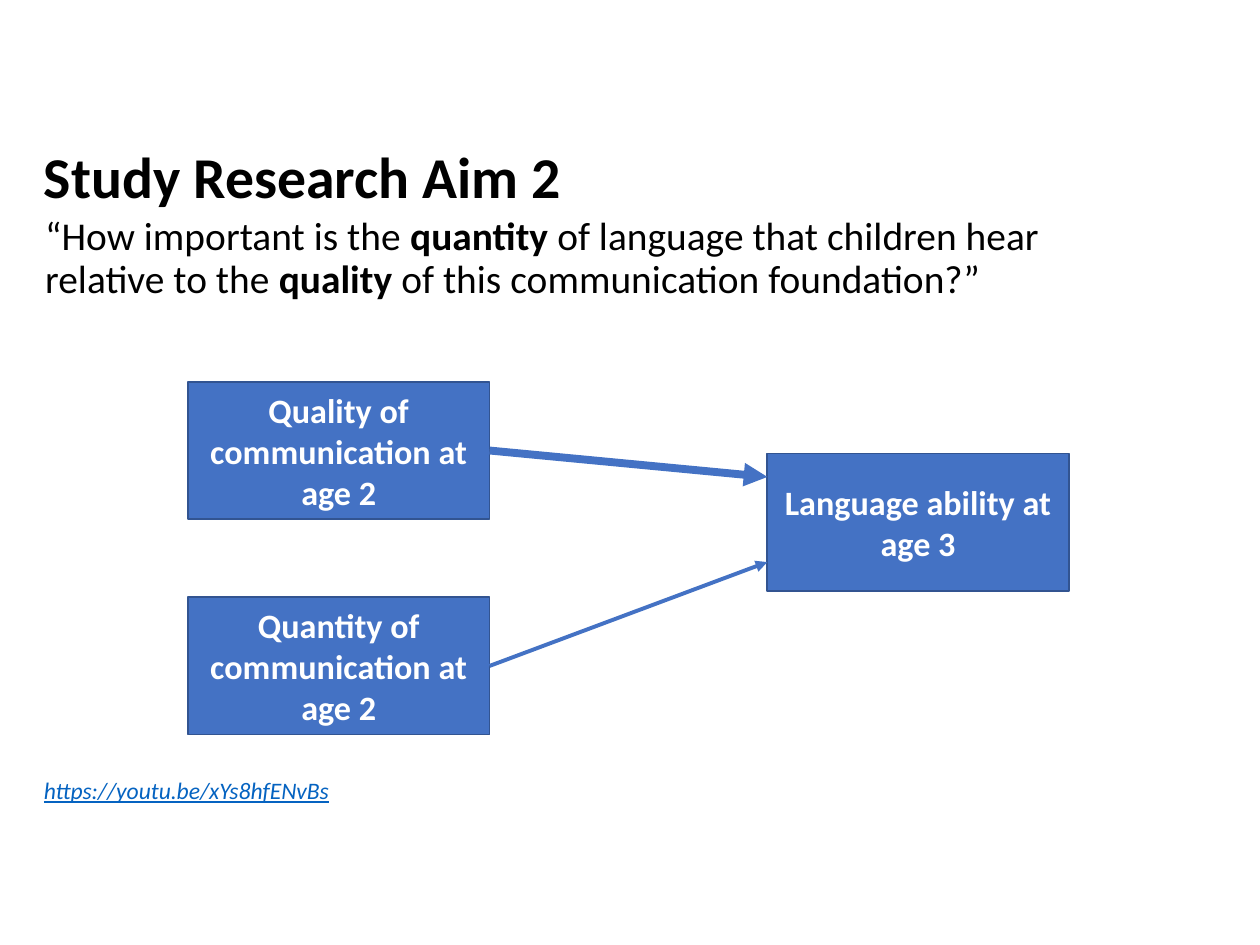
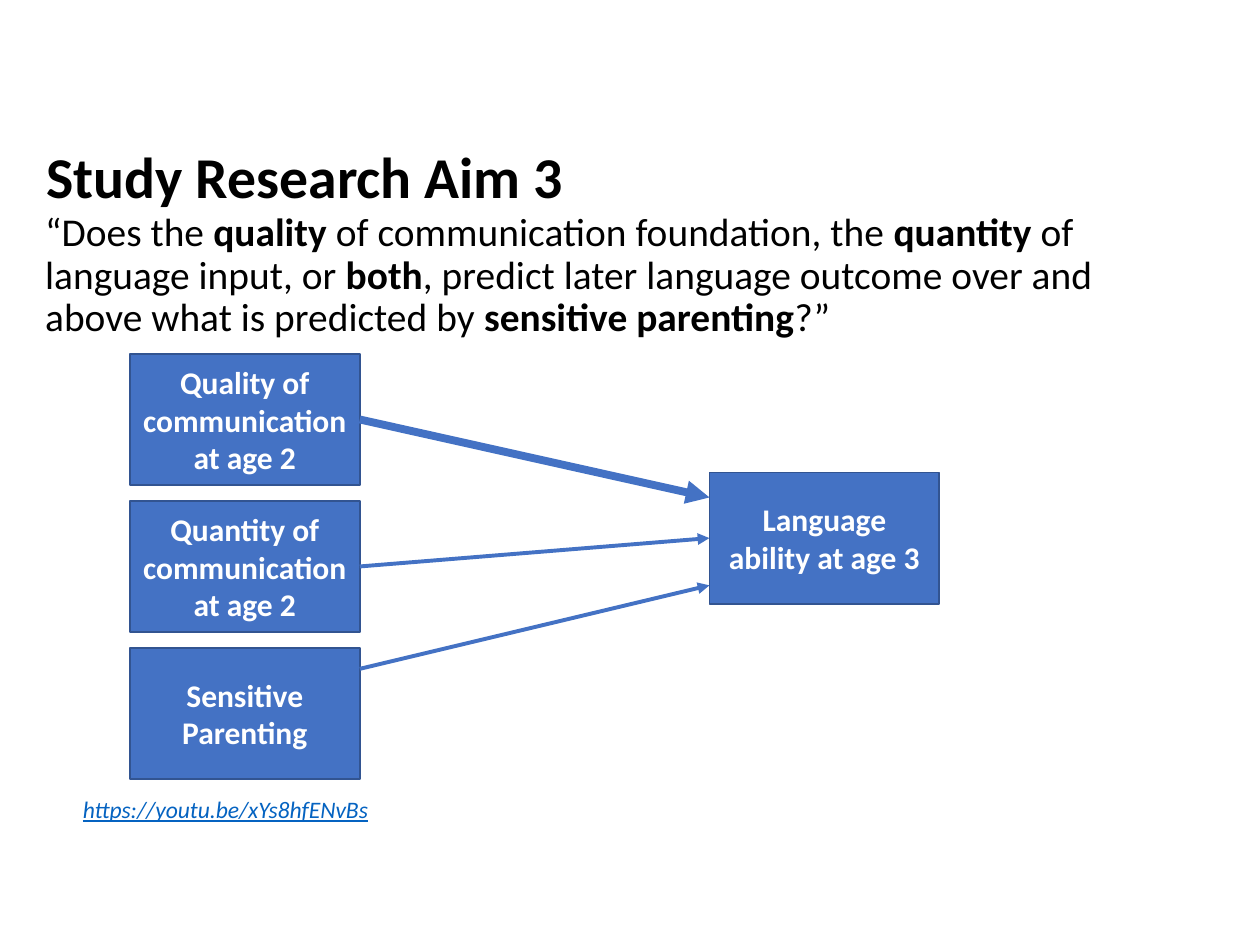
from lxml import etree
from pptx import Presentation
from pptx.dml.color import RGBColor
from pptx.enum.shapes import MSO_CONNECTOR, MSO_SHAPE
from pptx.enum.text import MSO_ANCHOR, PP_ALIGN
from pptx.oxml.ns import qn
from pptx.util import Pt

STRAIGHT = MSO_CONNECTOR.STRAIGHT
RECTANGLE = MSO_SHAPE.RECTANGLE
TOP, MIDDLE = MSO_ANCHOR.TOP, MSO_ANCHOR.MIDDLE
LEFT, CENTER = PP_ALIGN.LEFT, PP_ALIGN.CENTER

BLACK = RGBColor(0x00, 0x00, 0x00)
WHITE = RGBColor(0xFF, 0xFF, 0xFF)
BLUE = RGBColor(0x44, 0x72, 0xC4)
BLUE_EDGE = RGBColor(0x32, 0x54, 0x91)
LINK_BLUE = RGBColor(0x05, 0x63, 0xC1)

TITLE = {"size": Pt(33), "bold": True}
QUESTION = {"size": Pt(22.5)}
LINK = {"size": Pt(13.5), "italic": True, "underline": True}
LINK_TEXT = "https://youtu.be/xYs8hfENvBs"
STRONG, NORMAL = 4.5, 2.25
LEFT_SIDE, RIGHT_SIDE = 1, 3

# Text between ** marks is bold. A predictor is (label, arrow weight,
# arrow start and arrow end as fractions of the box heights).
SLIDES = [
    {
        "title": "Study Research Aim 2",
        "title_left": 18,
        "question": "“How important is the **quantity** of language that children hear "
                    "relative to the **quality** of this communication foundation?”",
        "question_top": 120.2,
        "link_at": (18, 440),
        "box_size": (172.4, 78.5),
        "label_size": 19.5,
        "predictors_at": (107.4, 218.2),
        "pitch": 123.1,
        "predictors": [
            ("Quality of communication at age 2", STRONG, 0.5, 0.17),
            ("Quantity of communication at age 2", NORMAL, 0.5, 0.79),
        ],
        "outcome_at": (438.5, 259.2),
    },
    {
        "title": "Study Research Aim 3",
        "title_left": 19.4,
        "question": "“Does the **quality** of communication foundation, the **quantity** of "
                    "language input, or **both**, predict later language outcome over and "
                    "above what is predicted by **sensitive parenting**?”",
        "question_top": 118,
        "link_at": (40.3, 450.7),
        "box_size": (131.4, 75),
        "label_size": 18,
        "predictors_at": (74.2, 202.2),
        "pitch": 84,
        "predictors": [
            ("Quality of communication at age 2", STRONG, 0.5, 0.19),
            ("Quantity of communication at age 2", NORMAL, 0.5, 0.5),
            ("Sensitive Parenting", NORMAL, 0.16, 0.86),
        ],
        "outcome_at": (405.4, 270),
    },
]
OUTCOME = "Language ability at age 3"


def write(shape, text, color, fmt, align=LEFT, anchor=TOP, spacing=1.0):
    """Fill a shape with one paragraph, bold between ** marks."""
    tf = shape.text_frame
    tf.word_wrap = True
    tf.vertical_anchor = anchor
    p = tf.paragraphs[0]
    p.alignment = align
    p.line_spacing = spacing
    for i, part in enumerate(text.split("**")):
        r = p.add_run()
        r.text = part
        r.font.name = "Calibri"
        r.font.color.rgb = color
        for name, value in ({"bold": i % 2 == 1} | fmt).items():
            setattr(r.font, name, value)


def add_text(slide, left, top, width, height, text, fmt, color=BLACK, **layout):
    box = slide.shapes.add_textbox(Pt(left), Pt(top), Pt(width), Pt(height))
    write(box, text, color, fmt, **layout)


def add_box(slide, left, top, size, label, label_size):
    sp = slide.shapes.add_shape(RECTANGLE, Pt(left), Pt(top), *map(Pt, size))
    sp.shadow.inherit = False
    sp.fill.solid()
    sp.fill.fore_color.rgb = BLUE
    sp.line.color.rgb = BLUE_EDGE
    sp.line.width = Pt(1)
    write(sp, label, WHITE, {"size": Pt(label_size), "bold": True}, CENTER, MIDDLE)
    return sp


def add_arrow(slide, source, target, weight, start, end):
    """Run from the right side of source to the left side of target."""
    line = slide.shapes.add_connector(
        STRAIGHT,
        source.left + source.width, source.top + int(source.height * start),
        target.left, target.top + int(target.height * end))
    if start == 0.5:
        line.begin_connect(source, RIGHT_SIDE)
    if end == 0.5:
        line.end_connect(target, LEFT_SIDE)
    line.line.color.rgb = BLUE
    line.line.width = Pt(weight)
    etree.SubElement(line.line._get_or_add_ln(), qn("a:tailEnd"), type="triangle")
    etree.SubElement(line._element.spPr, qn("a:effectLst"))


def build_slide(prs, aim):
    slide = prs.slides.add_slide(prs.slide_layouts[6])
    add_text(slide, aim["title_left"], 63.4, 620.6, 78.5, aim["title"], TITLE,
             anchor=MIDDLE, spacing=0.9)
    add_text(slide, 18.7, aim["question_top"], 620.6, 90, aim["question"], QUESTION,
             spacing=0.9)
    add_text(slide, *aim["link_at"], 185, 23.8, LINK_TEXT, LINK, LINK_BLUE)

    size, label_size = aim["box_size"], aim["label_size"]
    outcome = add_box(slide, *aim["outcome_at"], size, OUTCOME, label_size)
    left, top = aim["predictors_at"]
    for i, (label, weight, start, end) in enumerate(aim["predictors"]):
        box = add_box(slide, left, top + i * aim["pitch"], size, label, label_size)
        add_arrow(slide, box, outcome, weight, start, end)


def main():
    prs = Presentation()
    prs.slide_width, prs.slide_height = Pt(720), Pt(540)
    for aim in SLIDES:
        build_slide(prs, aim)
    prs.save("out.pptx")


if __name__ == "__main__":
    main()
